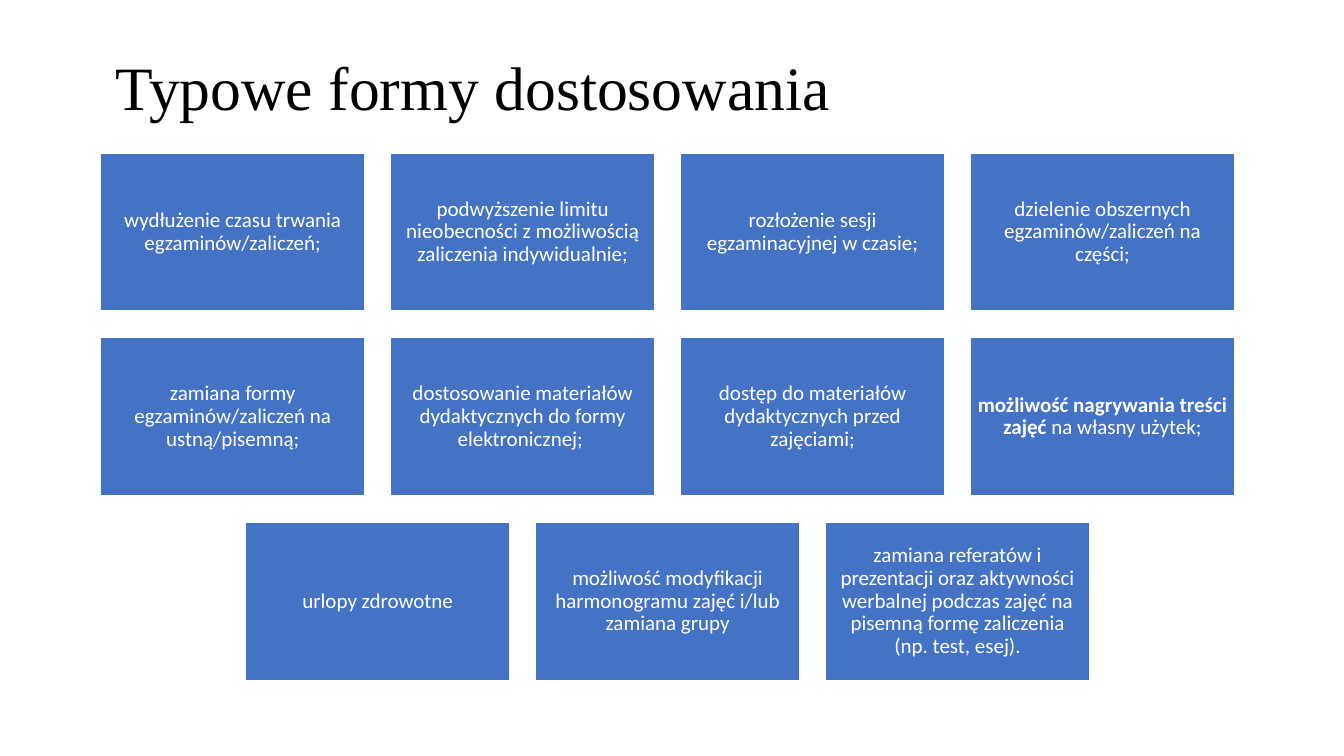
from pptx import Presentation
from pptx.dml.color import RGBColor
from pptx.enum.shapes import MSO_SHAPE
from pptx.enum.text import MSO_ANCHOR, PP_ALIGN
from pptx.util import Pt

COLORS = {"card": "4472C4", "light": "FFFFFF", "title": "000000"}
CARD_WIDTH, CARD_HEIGHT = 188.6, 113
COLUMN_STEP, ROW_STEP = 207.1, 131.9
GRID_CENTER, GRID_TOP = 476.9, 109.3

ADJUSTMENT_ROWS = [
    [
        [("wydłużenie czasu trwania egzaminów/zaliczeń;", False)],
        [("podwyższenie limitu nieobecności z możliwością zaliczenia indywidualnie;", False)],
        [("rozłożenie sesji egzaminacyjnej w czasie;", False)],
        [("dzielenie obszernych egzaminów/zaliczeń na części;", False)],
    ],
    [
        [("zamiana formy egzaminów/zaliczeń na ustną/pisemną;", False)],
        [("dostosowanie materiałów dydaktycznych do formy elektronicznej; ", False)],
        [("dostęp do materiałów dydaktycznych przed zajęciami;", False)],
        [("możliwość nagrywania treści zajęć ", True), ("na własny użytek;", False)],
    ],
    [
        [("urlopy zdrowotne", False)],
        [("możliwość modyfikacji harmonogramu zajęć i/lub zamiana grupy", False)],
        [("zamiana referatów i prezentacji oraz aktywności werbalnej podczas zajęć "
          "na pisemną formę zaliczenia (np. test, esej).", False)],
    ],
]


def color(name):
    """Return the named colour of the palette."""
    return RGBColor.from_string(COLORS[name])


def add_run(paragraph, words, size, face, shade, bold=False):
    """Append one formatted run to a paragraph."""
    run = paragraph.add_run()
    run.text = words
    run.font.size = Pt(size)
    run.font.name = face
    run.font.bold = bold
    run.font.color.rgb = color(shade)


def middle_paragraph(frame):
    """Set a wrapping, vertically centred frame and return its paragraph."""
    frame.word_wrap = True
    frame.vertical_anchor = MSO_ANCHOR.MIDDLE
    paragraph = frame.paragraphs[0]
    paragraph.line_spacing = 0.9
    return paragraph


def add_title(slide, words):
    """Add the slide heading."""
    heading = slide.shapes.add_textbox(Pt(75.6), Pt(28.8), Pt(818), Pt(71.3))
    add_run(middle_paragraph(heading.text_frame), words, 44, "Times New Roman", "title")


def add_card(slide, left, top, pieces):
    """Add one card with its centred wording."""
    card = slide.shapes.add_shape(
        MSO_SHAPE.RECTANGLE, Pt(left), Pt(top), Pt(CARD_WIDTH), Pt(CARD_HEIGHT))
    card.shadow.inherit = False
    card.fill.solid()
    card.fill.fore_color.rgb = color("card")
    card.line.color.rgb = color("light")
    card.line.width = Pt(1)
    frame = card.text_frame
    frame.margin_left = frame.margin_right = Pt(4.5)
    frame.margin_top = frame.margin_bottom = Pt(4.5)
    wording = middle_paragraph(frame)
    wording.alignment = PP_ALIGN.CENTER
    for words, bold in pieces:
        add_run(wording, words, 15, "Calibri", "light", bold)


def add_card_row(slide, top, cards):
    """Add a row of cards centred on the grid."""
    row_width = (len(cards) - 1) * COLUMN_STEP + CARD_WIDTH
    first_left = GRID_CENTER - row_width / 2
    for column, pieces in enumerate(cards):
        add_card(slide, first_left + column * COLUMN_STEP, top, pieces)


def main():
    """Build and save the slide."""
    presentation = Presentation()
    presentation.slide_width, presentation.slide_height = Pt(960), Pt(540)
    slide = presentation.slides.add_slide(presentation.slide_layouts[6])
    add_title(slide, "Typowe formy dostosowania")
    for row, cards in enumerate(ADJUSTMENT_ROWS):
        add_card_row(slide, GRID_TOP + row * ROW_STEP, cards)
    presentation.save("out.pptx")


if __name__ == "__main__":
    main()
